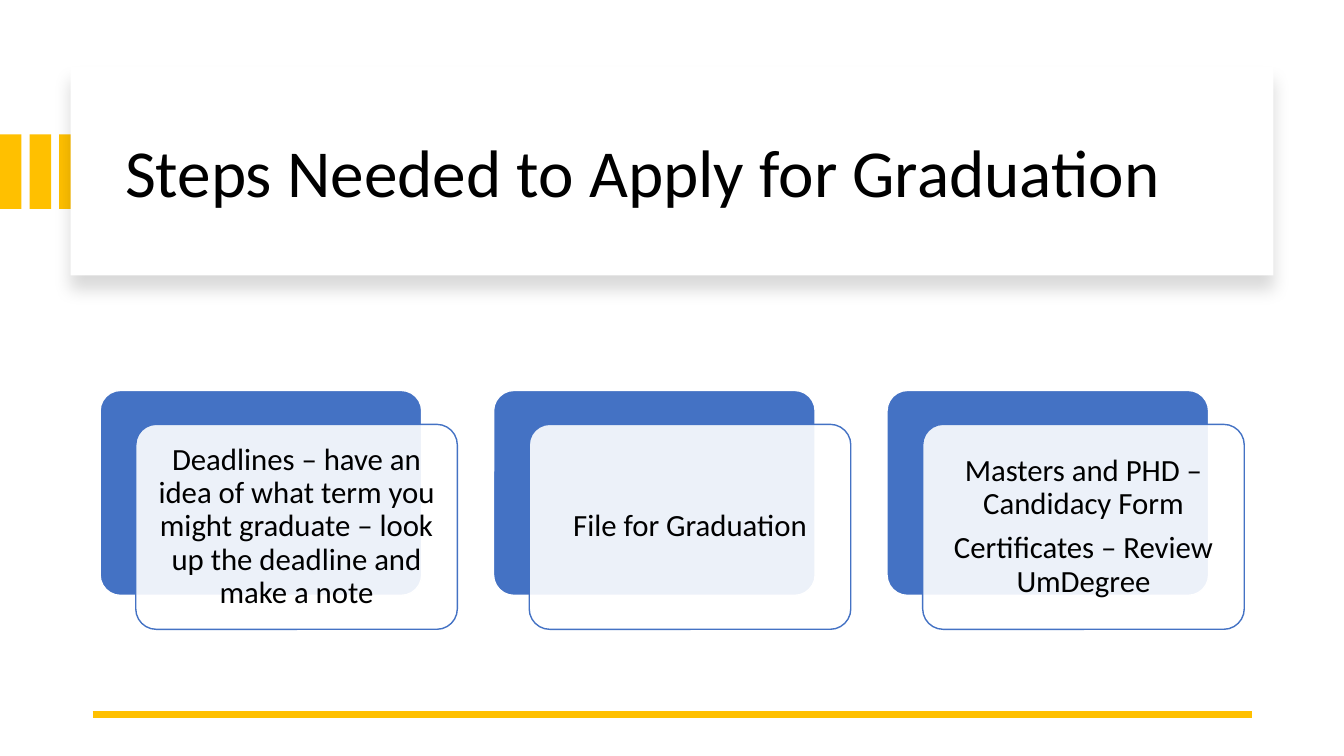
from dataclasses import dataclass

from lxml import etree
from pptx import Presentation
from pptx.dml.color import RGBColor
from pptx.enum.shapes import MSO_CONNECTOR, MSO_SHAPE
from pptx.enum.text import MSO_ANCHOR, PP_ALIGN
from pptx.oxml.ns import qn
from pptx.util import Inches, Pt

RECTANGLE = MSO_SHAPE.RECTANGLE
ROUNDED = MSO_SHAPE.ROUNDED_RECTANGLE
STRAIGHT = MSO_CONNECTOR.STRAIGHT
MIDDLE = MSO_ANCHOR.MIDDLE
LEFT, CENTER = PP_ALIGN.LEFT, PP_ALIGN.CENTER
TITLE_ONLY = 5
COLUMNS, ROWS = 40, 22.5


@dataclass(frozen=True)
class Theme:
    font: str = "Calibri"
    text: RGBColor = RGBColor(0x00, 0x00, 0x00)
    paper: RGBColor = RGBColor(0xFF, 0xFF, 0xFF)
    gold: RGBColor = RGBColor(0xFF, 0xC0, 0x00)
    blue: RGBColor = RGBColor(0x44, 0x72, 0xC4)
    title_size: int = 48
    body_size: int = 22
    line_spacing: float = 0.9
    paragraph_gap: float = 7.7
    card_inset: float = 0.09
    card_opacity: int = 90
    shadow_opacity: int = 15
    shadow_blur: int = 11
    shadow_distance: int = 10


class SlideBuilder:
    def __init__(self, presentation, theme):
        self.theme = theme
        self.column = presentation.slide_width / COLUMNS
        self.row = presentation.slide_height / ROWS
        self.slide = presentation.slides.add_slide(presentation.slide_layouts[TITLE_ONLY])

    def place(self, left, top, width, height):
        return (round(left * self.column), round(top * self.row),
                round(width * self.column), round(height * self.row))

    def box(self, kind, bounds, fill, line=None):
        shape = self.slide.shapes.add_shape(kind, *self.place(*bounds))
        shape.shadow.inherit = False
        shape.fill.solid()
        shape.fill.fore_color.rgb = fill
        if line is None:
            shape.line.fill.background()
        else:
            shape.line.color.rgb = line
            shape.line.width = Pt(1)
        if kind == ROUNDED:
            shape.adjustments[0] = 0.1
        return shape

    def set_opacity(self, color, percent):
        etree.SubElement(color, qn("a:alpha"), val=str(percent * 1000))

    def panel(self, bounds):
        shape = self.box(RECTANGLE, bounds, self.theme.paper)
        effects = shape._element.spPr.find(qn("a:effectLst"))
        shadow = etree.SubElement(
            effects, qn("a:outerShdw"), blurRad=str(Pt(self.theme.shadow_blur)),
            dist=str(Pt(self.theme.shadow_distance)), dir="5400000",
            algn="t", rotWithShape="0")
        color = etree.SubElement(shadow, qn("a:srgbClr"), val=str(self.theme.text))
        self.set_opacity(color, self.theme.shadow_opacity)

    def set_text(self, frame, lines, size, alignment):
        frame.word_wrap = True
        frame.vertical_anchor = MIDDLE
        for index, line in enumerate(lines):
            paragraph = frame.add_paragraph() if index else frame.paragraphs[0]
            paragraph.text = line
            paragraph.alignment = alignment
            paragraph.line_spacing = self.theme.line_spacing
            paragraph.space_before = Pt(self.theme.paragraph_gap if index else 0)
            paragraph.font.name = self.theme.font
            paragraph.font.size = Pt(size)
            paragraph.font.color.rgb = self.theme.text

    def title(self, bounds, text):
        title = self.slide.shapes.title
        title.left, title.top, title.width, title.height = self.place(*bounds)
        self.set_text(title.text_frame, [text], self.theme.title_size, LEFT)
        self.slide.shapes._spTree.append(title._element)

    def rule(self, left, right, top):
        start_x, y, end_x, _ = self.place(left, top, right, 0)
        connector = self.slide.shapes.add_connector(STRAIGHT, start_x, y, end_x, y)
        connector.line.color.rgb = self.theme.gold
        connector.line.width = Pt(4.5)
        etree.SubElement(connector._element.spPr, qn("a:effectLst"))

    def card(self, left, top, width, height, lines):
        theme = self.theme
        self.box(ROUNDED, (left, top, width, height), theme.blue, theme.paper)
        front = self.box(ROUNDED, (left + 1.06, top + 1.01, width, height),
                         theme.paper, theme.blue)
        color = front._element.spPr.find(qn("a:solidFill")).find(qn("a:srgbClr"))
        self.set_opacity(color, theme.card_opacity)
        frame = front.text_frame
        frame.margin_left = frame.margin_right = Inches(theme.card_inset)
        frame.margin_top = frame.margin_bottom = Inches(theme.card_inset)
        self.set_text(frame, lines, theme.body_size, CENTER)


def main():
    presentation = Presentation()
    presentation.slide_width = Inches(13.33)
    presentation.slide_height = Inches(7.5)
    theme = Theme()
    builder = SlideBuilder(presentation, theme)

    for index in range(3):
        builder.box(RECTANGLE, (index * 0.88, 4, 0.64, 2.22), theme.gold)
    builder.panel((2.1, 2, 35.8, 6.2))
    builder.title((3.42, 2.67, 33.4, 5.1), "Steps Needed to Apply for Graduation")
    builder.rule(2.76, 37.26, 21.27)

    steps = [
        ["Deadlines – have an idea of what term you might graduate – look up the deadline and make a note"],
        ["File for Graduation"],
        ["Masters and PHD – Candidacy Form", "Certificates – Review UmDegree"],
    ]
    for index, lines in enumerate(steps):
        builder.card(2.98 + index * 11.71, 11.62, 9.57, 6.1, lines)

    presentation.save("out.pptx")


if __name__ == "__main__":
    main()
